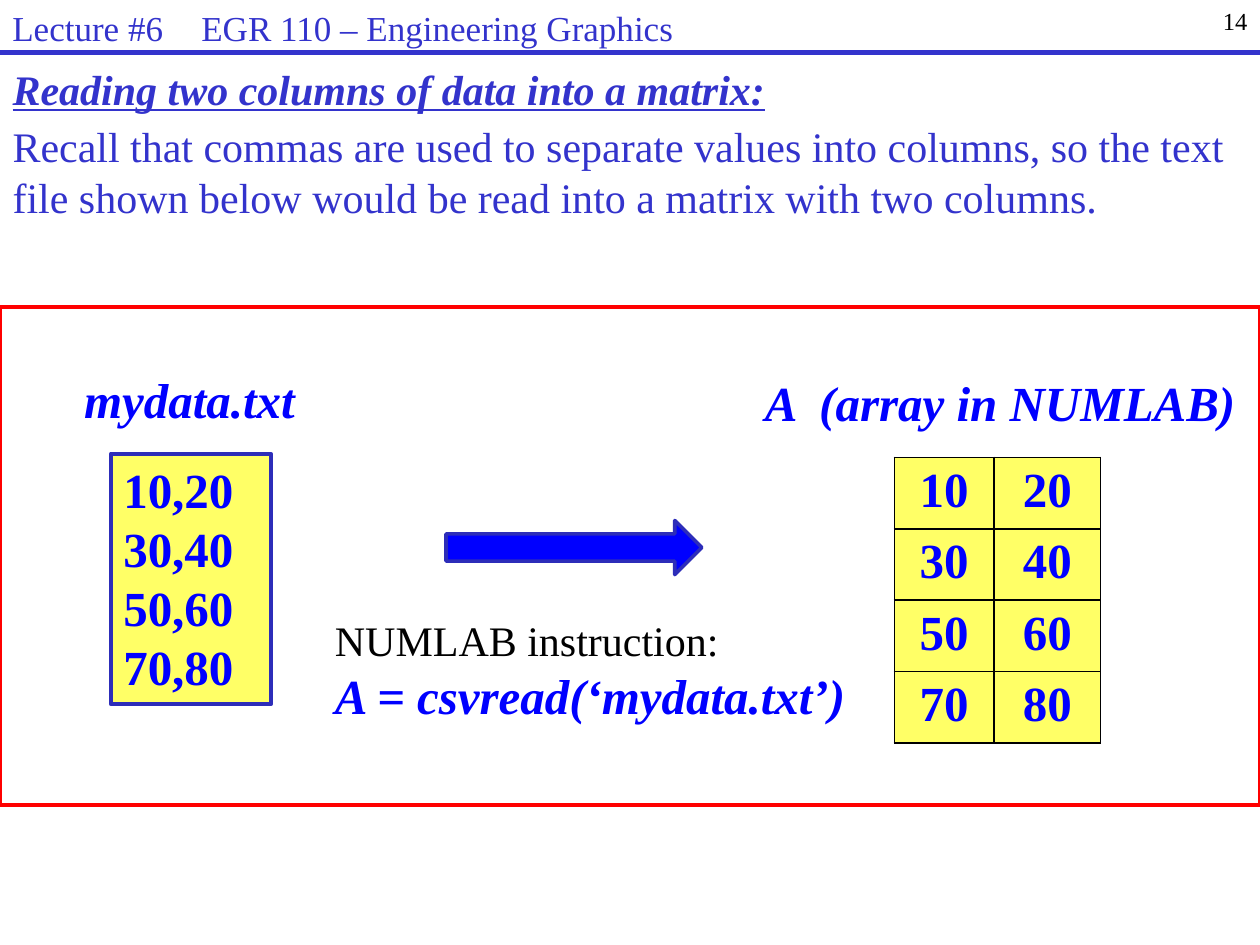
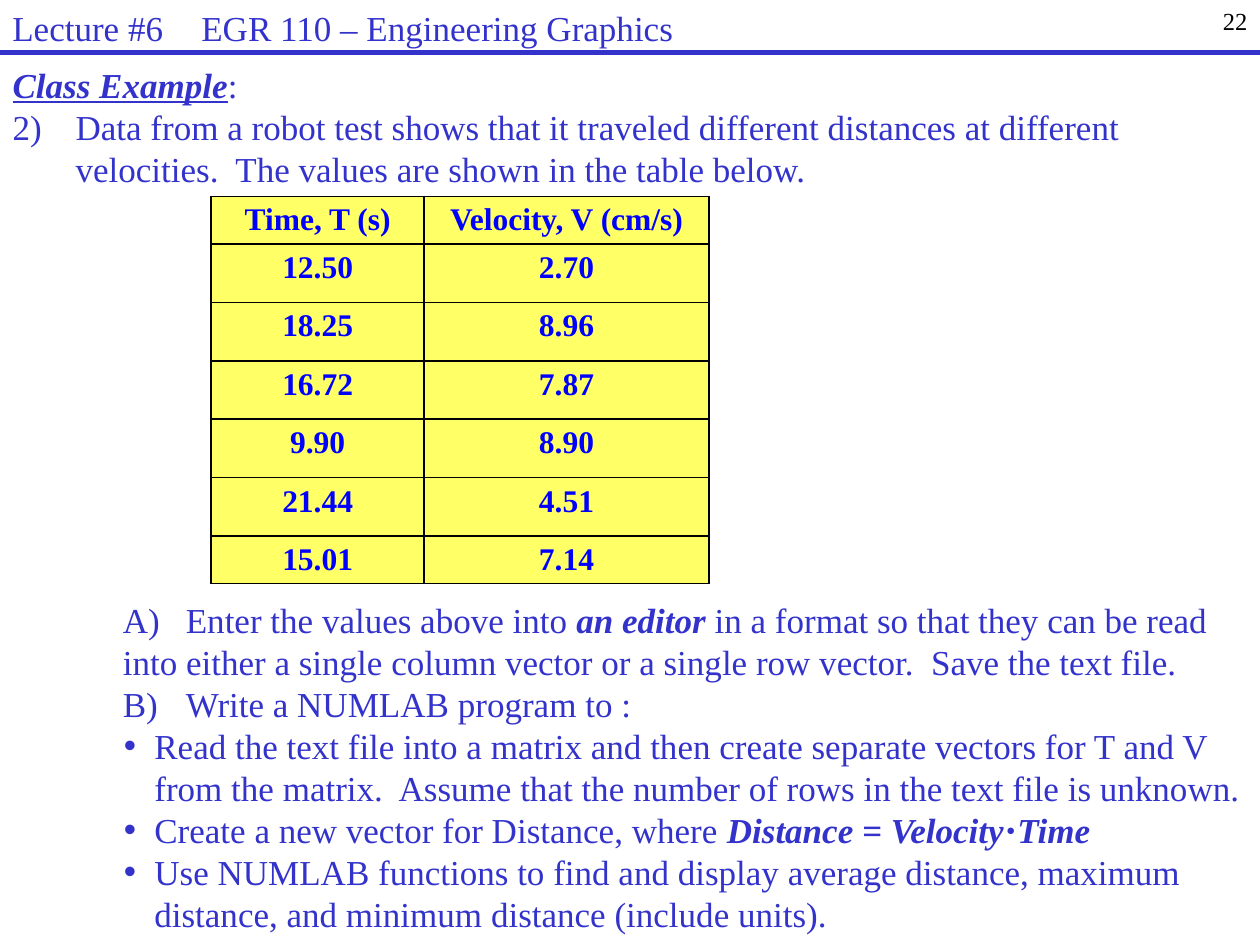
from lxml.etree import SubElement
from pptx import Presentation
from pptx.dml.color import RGBColor
from pptx.enum.shapes import MSO_CONNECTOR, MSO_SHAPE
from pptx.enum.text import MSO_ANCHOR, MSO_AUTO_SIZE, PP_ALIGN
from pptx.oxml.ns import qn
from pptx.util import Pt

FONT = "Times New Roman"
INDIGO, BLUE, NAVY = "3333CC", "0000FF", "2D2DB9"
YELLOW, RED, BLACK = "FFFF66", "FF0000", "000000"

HEADER = "Lecture #6\tEGR 110 – Engineering Graphics"
TITLE_TOP = 32.5

STYLES = {
    "header": dict(size=20, color=INDIGO),
    "number": dict(size=14, color=BLACK),
    "lead": dict(size=24, color=INDIGO),
    "lead_key": dict(size=24, color=INDIGO, bold=True, italic=True, underline=True),
    "task": dict(size=20, color=INDIGO),
    "task_em": dict(size=20, color=INDIGO, bold=True, italic=True),
    "task_key": dict(size=20, color=INDIGO, bold=True, italic=True, underline=True),
    "label": dict(size=28, color=BLUE, bold=True, italic=True),
    "note": dict(size=24, color=BLACK),
    "data": dict(size=28, color=BLUE, bold=True),
    "cell": dict(size=18, color=BLUE, bold=True),
}

LETTERED = dict(left=63, hang=63, tabs=(27, 63))
BULLET = dict(left=81, hang=17.5, bullet=("a:buChar", {"char": "•"}))
NUMBERED = dict(left=36, hang=36,
                bullet=("a:buAutoNum", {"type": "arabicParenR", "startAt": "2"}))

MATRIX = dict(
    number="14",
    title=[("Reading two columns of data into a matrix:", "lead_key")],
    body=[([("Recall that commas are used to separate values into columns, so the text "
             "file shown below would be read into a matrix with two columns.", "lead")], {})],
    rows=[("10", "20"), ("30", "40"), ("50", "60"), ("70", "80")],
    labels=[
        ((430, 209.5, 284, 41), [("A  (array in NUMLAB)", "label")]),
        ((184.3, 347.8, 313, 71), [("NUMLAB instruction:", "note"),
                                   ("A = csvread(‘mydata.txt’)", "label")]),
        ((41, 207.4, 140, 41), [("mydata.txt", "label")]),
    ],
)

EXAMPLE = dict(
    number="22",
    title=[("Class Example", "task_key"), (":", "task")],
    body=[([("Data from a robot test shows that it traveled different distances at "
             "different velocities.  The values are shown in the table below.", "task")],
           NUMBERED)],
    tasks=[
        ([("\tA)\tEnter the values above into ", "task"), ("an editor", "task_em"),
          (" in a format so that they can be read into either a single column vector "
           "or a single row vector.  Save the text file.", "task")], LETTERED),
        ([("\tB)\tWrite a NUMLAB program to :", "task")], LETTERED),
        ([("Read the text file into a matrix and then create separate vectors for T and V "
           "from the matrix.  Assume that the number of rows in the text file is unknown.",
           "task")], BULLET),
        ([("Create a new vector for Distance, where ", "task"),
          ("Distance = Velocity⋅Time", "task_em")], BULLET),
        ([("Use NUMLAB functions to find and display average distance, maximum distance, "
           "and minimum distance (include units).", "task")], BULLET),
    ],
    rows=[("Time, T (s)", "Velocity, V (cm/s)"), ("12.50", "2.70"), ("18.25", "8.96"),
          ("16.72", "7.87"), ("9.90", "8.90"), ("21.44", "4.51"), ("15.01", "7.14")],
)


def rgb(code):
    """Turn a hex string into a colour."""
    return RGBColor.from_string(code)


def pts(values):
    """Turn numbers into lengths in points."""
    return [Pt(v) for v in values]


def add_run(p, text, style):
    """Add a run in a named style."""
    r = p.add_run()
    r.text = text
    fmt = {"name": FONT, "bold": False, "italic": False, **STYLES[style]}
    r.font.color.rgb = rgb(fmt.pop("color"))
    fmt["size"] = Pt(fmt["size"])
    for key, value in fmt.items():
        setattr(r.font, key, value)


def set_indent(p, left=0, hang=0, bullet=("a:buNone", {}), tabs=()):
    """Set a paragraph's indents, bullet and tab stops."""
    pPr = p._p.get_or_add_pPr()
    pPr.set("marL", str(Pt(left)))
    pPr.set("indent", str(Pt(-hang)))
    SubElement(pPr, qn(bullet[0]), bullet[1])
    if tabs:
        stops = SubElement(pPr, qn("a:tabLst"))
        for stop in tabs:
            SubElement(stops, qn("a:tab"), pos=str(Pt(stop)), algn="l")


def write(tf, paras, align=PP_ALIGN.LEFT):
    """Fill a text frame from (runs, layout) pairs."""
    frame = dict(word_wrap=True, auto_size=MSO_AUTO_SIZE.NONE, vertical_anchor=MSO_ANCHOR.TOP)
    for key, value in frame.items():
        setattr(tf, key, value)
    for i, (runs, layout) in enumerate(paras):
        p = tf.add_paragraph() if i else tf.paragraphs[0]
        p.alignment = align
        p.space_before = Pt(0)
        set_indent(p, **layout)
        for text, style in runs:
            add_run(p, text, style)


def place(sp, box):
    """Move and size a shape."""
    for key, value in zip(("left", "top", "width", "height"), pts(box)):
        setattr(sp, key, value)


def add_text(s, box, paras, align=PP_ALIGN.LEFT):
    """Add a text box."""
    write(s.shapes.add_textbox(*pts(box)).text_frame, paras, align)


def add_box(s, kind, box, line, width, fill=None):
    """Add an outlined preset shape."""
    sp = s.shapes.add_shape(kind, *pts(box))
    sp.shadow.inherit = False
    sp.line.color.rgb = rgb(line)
    sp.line.width = Pt(width)
    if fill:
        sp.fill.solid()
        sp.fill.fore_color.rgb = rgb(fill)
    else:
        sp.fill.background()
    return sp


def add_grid(s, left, top, widths, heights, rows, style, bottom=3.6):
    """Add a yellow table with black rules."""
    size = (left, top, sum(widths), sum(heights))
    table = s.shapes.add_table(len(rows), len(widths), *pts(size)).table
    table.first_row = table.horz_banding = False
    for col, width in zip(table.columns, widths):
        col.width = Pt(width)
    for row, height, values in zip(table.rows, heights, rows):
        row.height = Pt(height)
        for cell, value in zip(row.cells, values):
            cell.margin_bottom = Pt(bottom)
            tcPr = cell._tc.get_or_add_tcPr()
            for side in "LRTB":
                ln = SubElement(tcPr, qn(f"a:ln{side}"), w=str(Pt(1)))
                SubElement(SubElement(ln, qn("a:solidFill")), qn("a:srgbClr"), val=BLACK)
            cell.fill.solid()
            cell.fill.fore_color.rgb = rgb(YELLOW)
            p = cell.text_frame.paragraphs[0]
            p.alignment = PP_ALIGN.CENTER
            add_run(p, value, style)


def add_slide(prs, layout, content, pitch):
    """Add a slide with the shared header, its title and its opening text."""
    s = prs.slides.add_slide(prs.slide_layouts[layout])
    add_text(s, (570, 0, 150, 36), [([(content["number"], "number")], {})], PP_ALIGN.RIGHT)
    rule = s.shapes.add_connector(MSO_CONNECTOR.STRAIGHT, *pts((0, 30, 720, 30)))
    rule.line.color.rgb = rgb(INDIGO)
    rule.line.width = Pt(3)
    SubElement(rule._element.spPr, qn("a:effectLst"))
    add_text(s, (0, 0, 570, 30), [([(HEADER, "header")], dict(tabs=(116.2,)))])
    place(s.shapes.title, (0, TITLE_TOP, 720, pitch + 4))
    write(s.shapes.title.text_frame, [(content["title"], {})])
    body = s.placeholders[1]
    place(body, (0, TITLE_TOP + pitch, 720, 66 if pitch > 30 else 54))
    write(body.text_frame, content["body"])
    return s


def build_matrix(prs):
    """Build the slide on reading two columns."""
    s = add_slide(prs, 1, MATRIX, 33)
    rows = MATRIX["rows"]
    data = add_box(s, MSO_SHAPE.RECTANGLE, (63.4, 259.2, 91.4, 143.3), NAVY, 2.25, YELLOW)
    write(data.text_frame, [([(",".join(row), "data")], {}) for row in rows])
    add_box(s, MSO_SHAPE.RIGHT_ARROW, (254.9, 297.4, 146.2, 31), NAVY, 2, BLUE)
    add_grid(s, 511, 261.4, (57, 61), [40.8] * len(rows), rows, "data")
    for box, lines in MATRIX["labels"]:
        add_text(s, box, [([line], {}) for line in lines])
    add_box(s, MSO_SHAPE.RECTANGLE, (0, 175.7, 720, 284.4), RED, 2.25)


def build_example(prs):
    """Build the class example slide."""
    s = add_slide(prs, 3, EXAMPLE, 24)
    tasks = s.placeholders[2]
    place(tasks, (0, 338.4, 720, 201.6))
    write(tasks.text_frame, EXAMPLE["tasks"])
    rows = EXAMPLE["rows"]
    heights = [27.2] + [33.4] * (len(rows) - 2) + [27.2]
    add_grid(s, 120.7, 112.2, (121.7, 162.7), heights, rows, "cell", bottom=2)


def main():
    """Build and save the deck."""
    prs = Presentation()
    prs.slide_width, prs.slide_height = pts((720, 540))
    build_matrix(prs)
    build_example(prs)
    prs.save("out.pptx")


if __name__ == "__main__":
    main()
